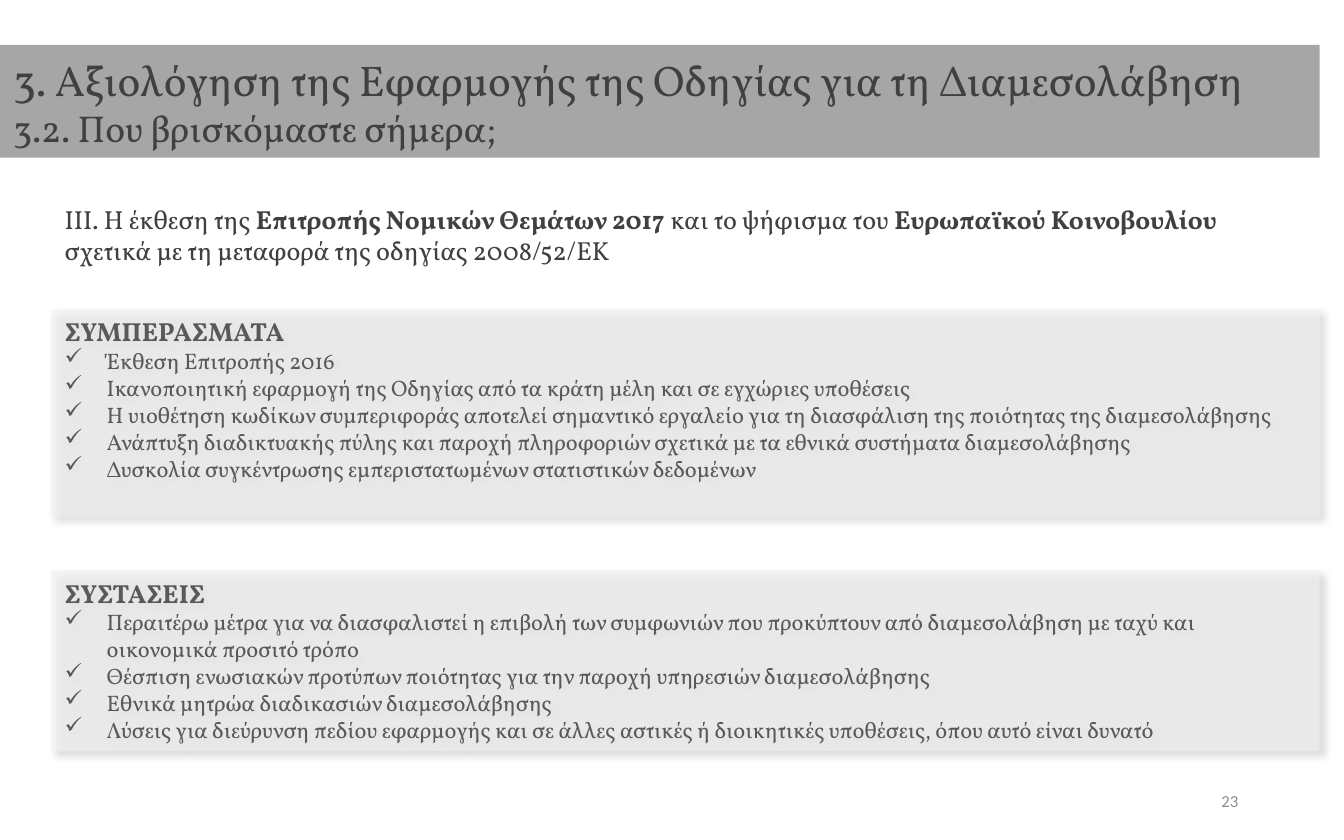
from lxml.etree import SubElement
from pptx import Presentation
from pptx.dml.color import RGBColor
from pptx.enum.shapes import MSO_SHAPE
from pptx.enum.text import MSO_ANCHOR, PP_ALIGN
from pptx.oxml import parse_xml
from pptx.oxml.ns import nsdecls, qn
from pptx.util import Pt

COLOURS = {
    "band": "A6A6A6",
    "panel": "F2F2F2",
    "heading": "404040",
    "body": "595959",
    "number": "8C8C8C",
    "shadow": "000000",
}
SERIF = "Vollkorn"
INDENT = 22.5

CONCLUSIONS = [
    "Έκθεση Επιτροπής 2016",
    "Ικανοποιητική εφαρμογή της Οδηγίας από τα κράτη μέλη και σε εγχώριες υποθέσεις",
    "Η υιοθέτηση κωδίκων συμπεριφοράς αποτελεί σημαντικό εργαλείο για τη διασφάλιση της ποιότητας της διαμεσολάβησης",
    "Ανάπτυξη διαδικτυακής πύλης και παροχή πληροφοριών σχετικά με τα εθνικά συστήματα διαμεσολάβησης",
    "Δυσκολία συγκέντρωσης εμπεριστατωμένων στατιστικών δεδομένων",
]
RECOMMENDATIONS = [
    "Περαιτέρω μέτρα για να διασφαλιστεί η επιβολή των συμφωνιών που προκύπτουν από διαμεσολάβηση με ταχύ και οικονομικά προσιτό τρόπο",
    "Θέσπιση ενωσιακών προτύπων ποιότητας για την παροχή υπηρεσιών διαμεσολάβησης",
    "Εθνικά μητρώα διαδικασιών διαμεσολάβησης",
    "Λύσεις για διεύρυνση πεδίου εφαρμογής και σε άλλες αστικές ή διοικητικές υποθέσεις, όπου αυτό είναι δυνατό",
]


def add_run(paragraph, text, colour, size, bold=False, name=SERIF):
    """Append a formatted run to a paragraph."""
    run = paragraph.add_run()
    run.text = text
    for attribute, value in {"size": Pt(size), "bold": bold, "name": name}.items():
        setattr(run.font, attribute, value)
    run.font.color.rgb = RGBColor.from_string(COLOURS[colour])


def set_frame(shape, anchor=MSO_ANCHOR.TOP):
    """Make the text of a shape wrap from its anchor and return the frame."""
    frame = shape.text_frame
    for attribute, value in {"word_wrap": True, "vertical_anchor": anchor}.items():
        setattr(frame, attribute, value)
    return frame


def add_paragraph(frame, first=False, alignment=PP_ALIGN.LEFT):
    """Return an aligned paragraph, reusing the one a frame starts with."""
    paragraph = frame.paragraphs[0] if first else frame.add_paragraph()
    paragraph.alignment = alignment
    return paragraph


def add_rectangle(slide, box, colour):
    """Add a filled rectangle without line or shadow."""
    shape = slide.shapes.add_shape(MSO_SHAPE.RECTANGLE, *map(Pt, box))
    shape.shadow.inherit = False
    shape.fill.solid()
    shape.fill.fore_color.rgb = RGBColor.from_string(COLOURS[colour])
    shape.line.fill.background()
    return shape


def add_text_box(slide, box, anchor=MSO_ANCHOR.TOP):
    """Add a text box and return its frame."""
    return set_frame(slide.shapes.add_textbox(*map(Pt, box)), anchor)


def add_translucent_shadow(shape):
    """Make the fill of a shape translucent and cast a soft shadow."""
    properties = shape._element.spPr
    fill = properties.find(qn("a:solidFill"))
    SubElement(fill[0], qn("a:alpha"), val="59000")
    effects = properties.find(qn("a:effectLst"))
    effects.append(parse_xml(
        f'<a:outerShdw {nsdecls("a")} blurRad="{Pt(4)}" dist="{Pt(3)}" dir="2700000" '
        f'algn="tl" rotWithShape="0"><a:srgbClr val="{COLOURS["shadow"]}">'
        '<a:alpha val="22000"/></a:srgbClr></a:outerShdw>'
    ))


def add_check_bullet(paragraph):
    """Give a paragraph a hanging check mark."""
    properties = paragraph._p.get_or_add_pPr()
    properties.set("marL", str(Pt(INDENT)))
    properties.set("indent", str(-Pt(INDENT)))
    SubElement(properties, qn("a:buChar"), char="✓")


def add_title_band(slide, box):
    """Add the grey band with the title and subtitle."""
    frame = set_frame(add_rectangle(slide, box, "band"))
    title = add_paragraph(frame, first=True)
    add_run(title, "3", "heading", 24)
    add_run(title, ". Αξιολόγηση της Εφαρμογής της Οδηγίας για τη Διαμεσολάβηση", "heading", 23)
    add_run(add_paragraph(frame), "3.2. Που βρισκόμαστε σήμερα;", "heading", 20)


def add_introduction(slide, box):
    """Add the sentence that names the report and the resolution."""
    paragraph = add_paragraph(add_text_box(slide, box), first=True)
    for text, bold in [
        ("III. Η έκθεση της ", False),
        ("Επιτροπής Νομικών Θεμάτων 2017 ", True),
        ("και το ψήφισμα του ", False),
        ("Ευρωπαϊκού Κοινοβουλίου ", True),
        ("σχετικά με τη μεταφορά της οδηγίας 2008/52/ΕΚ", False),
    ]:
        add_run(paragraph, text, "heading", 14, bold)


def add_panel(slide, box, heading, points):
    """Add a shaded panel with a heading and checked points."""
    shape = add_rectangle(slide, box, "panel")
    add_translucent_shadow(shape)
    frame = set_frame(shape)
    add_run(add_paragraph(frame, first=True), heading, "body", 14, bold=True)
    for point in points:
        paragraph = add_paragraph(frame)
        add_check_bullet(paragraph)
        add_run(paragraph, point, "body", 12)


def add_slide_number(slide, box, number):
    """Add the slide number at the right of its box."""
    frame = add_text_box(slide, box, MSO_ANCHOR.MIDDLE)
    paragraph = add_paragraph(frame, first=True, alignment=PP_ALIGN.RIGHT)
    add_run(paragraph, number, "number", 9, name="Calibri")


def main():
    """Build the slide and save it."""
    presentation = Presentation()
    presentation.slide_width, presentation.slide_height = Pt(720), Pt(450)
    slide = presentation.slides.add_slide(presentation.slide_layouts[6])
    left, right = 27.6, 707
    add_title_band(slide, (0, 24, right, 60.4))
    add_introduction(slide, (left, 105.2, 643, 41))
    add_panel(slide, (left, 165.6, right - left, 111.6), "ΣΥΜΠΕΡΑΣΜΑΤΑ", CONCLUSIONS)
    add_panel(slide, (left, 305.6, right - left, 97), "ΣΥΣΤΑΣΕΙΣ", RECOMMENDATIONS)
    add_slide_number(slide, (508.5, 417, 162, 24), "23")
    presentation.save("out.pptx")


if __name__ == "__main__":
    main()
